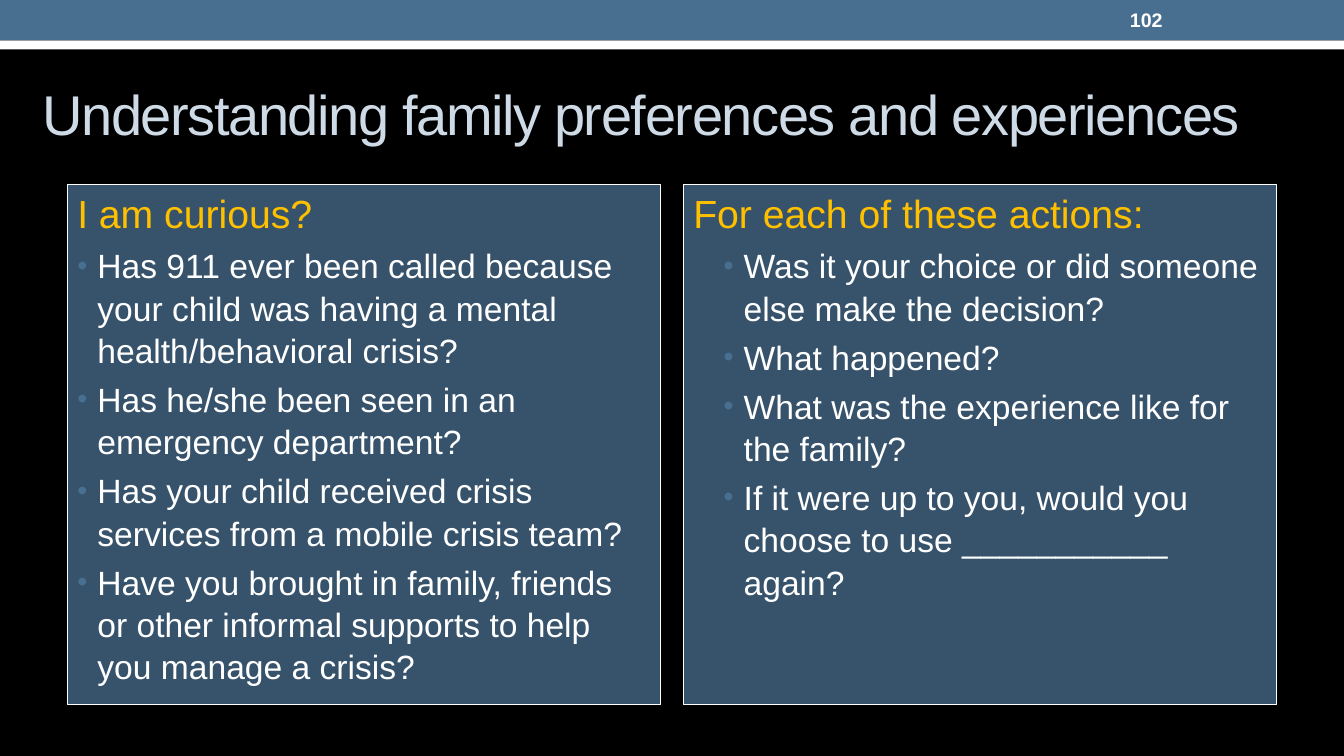
from lxml.etree import SubElement
from pptx import Presentation
from pptx.dml.color import RGBColor
from pptx.enum.shapes import MSO_SHAPE as Shape
from pptx.enum.text import MSO_ANCHOR as Anchor, MSO_AUTO_SIZE as AutoSize, PP_ALIGN as Align
from pptx.oxml.ns import qn
from pptx.util import Pt

WIDTH, HEIGHT = 960, 540
BLACK, WHITE, BLUE, PANEL = "000000", "FFFFFF", "496F90", "37536C"
PALE_BLUE, GOLD = "CEDBE6", "FFC000"

CURIOUS = [
    "Has 911 ever been called because your child was having a mental health/behavioral crisis?",
    "Has he/she been seen in an emergency department?",
    "Has your child received crisis services from a mobile crisis team?",
    "Have you brought in family, friends or other informal supports to help you manage a crisis?",
]
ACTIONS = [
    "Was it your choice or did someone else make the decision?",
    "What happened?",
    "What was the experience like for the family?",
    "If it were up to you, would you choose to use ___________ again?",
]


def paint(fill, color):
    fill.solid()
    fill.fore_color.rgb = RGBColor.from_string(color)


def place(shape, box):
    shape.left, shape.top, shape.width, shape.height = (Pt(value) for value in box)


def format_paragraph(paragraph, size, color, bold=False):
    paragraph.alignment = Align.LEFT
    for run in paragraph.runs:
        run.font.name = "Arial"
        run.font.size = Pt(size)
        run.font.bold = bold
        paint(run.font.fill, color)


def set_bullet(paragraph, indent):
    """Indent the paragraph and give it a blue bullet, or none at zero indent."""
    properties = paragraph._p.get_or_add_pPr()
    properties.set("marL", str(Pt(indent)))
    properties.set("indent", str(Pt(-14.4 if indent else 0)))
    if not indent:
        SubElement(properties, qn("a:buNone"))
        return
    bullet_color = SubElement(properties, qn("a:buClr"))
    SubElement(bullet_color, qn("a:srgbClr"), val=BLUE)
    SubElement(properties, qn("a:buSzPct"), val="85000")
    SubElement(properties, qn("a:buFont"), typeface="Arial")
    SubElement(properties, qn("a:buChar"), char="•")


def add_band(slide, box, color):
    band = slide.shapes.add_shape(Shape.RECTANGLE, *(Pt(value) for value in box))
    band.shadow.inherit = False
    paint(band.fill, color)
    band.line.fill.background()


def add_header(slide, box, number):
    """Blue band with the slide number and a white strip beneath it."""
    left, top, width, height = box
    blue_height = 28.8
    add_band(slide, (left, top + blue_height, width, height - blue_height), WHITE)
    add_band(slide, (left, top, width, blue_height), BLUE)
    number_box = slide.shapes.add_textbox(Pt(left + 800), Pt(top + 1.4), Pt(112), Pt(26))
    frame = number_box.text_frame
    frame.word_wrap = True
    frame.vertical_anchor = Anchor.MIDDLE
    frame.text = number
    format_paragraph(frame.paragraphs[0], 14, WHITE, bold=True)


def fill_title(title, box, text):
    place(title, box)
    frame = title.text_frame
    frame.text = text
    frame.auto_size = AutoSize.NONE
    frame.vertical_anchor = Anchor.MIDDLE
    paragraph = frame.paragraphs[0]
    format_paragraph(paragraph, 40, PALE_BLUE)
    paragraph.runs[0].font._element.set("spc", "-100")


def fill_panel(panel, box, heading, questions, level, indent):
    """Bordered panel with a gold heading over bulleted questions."""
    place(panel, box)
    paint(panel.fill, PANEL)
    paint(panel.line.fill, WHITE)
    panel.line.width = Pt(0.75)
    frame = panel.text_frame
    frame.text = "\n".join([heading] + questions)
    frame.auto_size = AutoSize.NONE
    frame.vertical_anchor = Anchor.TOP
    heading_paragraph, *question_paragraphs = frame.paragraphs
    format_paragraph(heading_paragraph, 28, GOLD)
    set_bullet(heading_paragraph, 0)
    for paragraph in question_paragraphs:
        paragraph.level = level
        paragraph.line_spacing = 1.05
        paragraph.space_before = Pt(4.8)
        format_paragraph(paragraph, 24, WHITE)
        set_bullet(paragraph, indent)


def add_comparison_slide(presentation):
    slide = presentation.slides.add_slide(presentation.slide_layouts[3])
    paint(slide.background.fill, BLACK)
    title, left_panel, right_panel = slide.placeholders

    # Header and title
    add_header(slide, (0, 0, WIDTH, 35.3), "102")
    fill_title(title, (23, 42, 909, 78), "Understanding family preferences and experiences")

    # Two equal panels
    margin, gap, top, height = 48, 16, 131.8, 371.5
    width = (WIDTH - 2 * margin - gap) / 2
    fill_panel(left_panel, (margin, top, width, height),
               "I am curious?", CURIOUS, 0, 14.4)
    fill_panel(right_panel, (margin + width + gap, top, width, height),
               "For each of these actions:", ACTIONS, 1, 36)


def main():
    presentation = Presentation()
    presentation.slide_width, presentation.slide_height = Pt(WIDTH), Pt(HEIGHT)
    add_comparison_slide(presentation)
    presentation.save("out.pptx")


if __name__ == "__main__":
    main()
